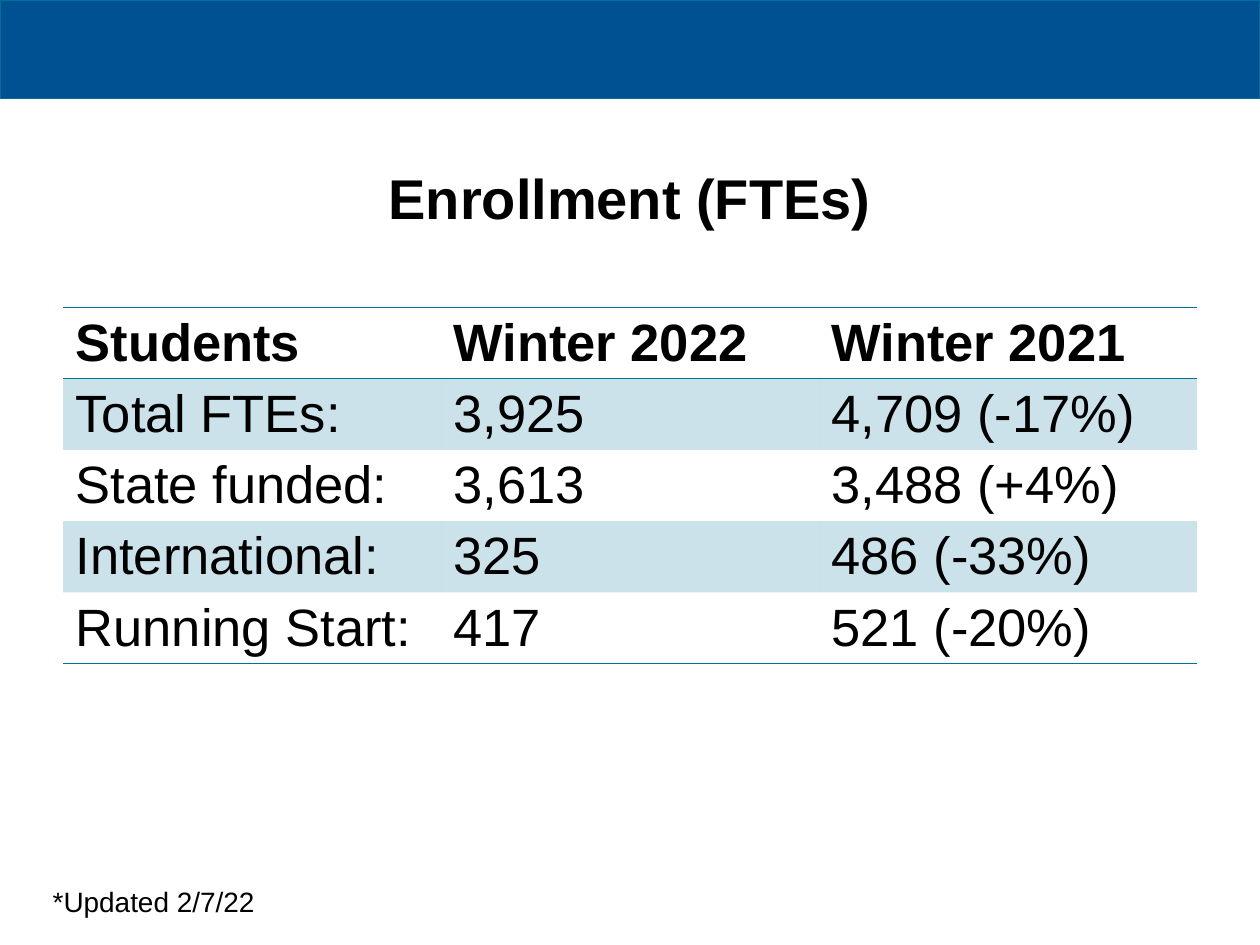
from lxml.etree import SubElement
from pptx import Presentation
from pptx.dml.color import RGBColor
from pptx.enum.shapes import MSO_SHAPE
from pptx.enum.text import MSO_ANCHOR, PP_ALIGN
from pptx.oxml.ns import qn
from pptx.util import Inches, Pt

COLORS = {"banner": "005192", "edge": "006F9B", "rule": "00719F", "text": "000000"}
FONT = "Arial"
ENROLLMENT = [
    ("Students", "Winter 2022", "Winter 2021"),
    ("Total FTEs:", "3,925", "4,709 (-17%)"),
    ("State funded:", "3,613", "3,488 (+4%)"),
    ("International:", "325", "486 (-33%)"),
    ("Running Start:", "417", "521 (-20%)"),
]


def write(frame, text, size, bold=False, align=PP_ALIGN.LEFT):
    """Put one formatted run in the first paragraph of a text frame."""
    para = frame.paragraphs[0]
    para.alignment = align
    span = para.add_run()
    span.text = text
    span.font.name = FONT
    span.font.size = Pt(size)
    span.font.bold = bold
    span.font.color.rgb = RGBColor.from_string(COLORS["text"])


def add_solid_fill(parent, color, alpha=100):
    """Append a solid fill with the given opacity in percent."""
    fill = SubElement(parent, qn("a:solidFill"))
    tone = SubElement(fill, qn("a:srgbClr"), val=color)
    if alpha < 100:
        SubElement(tone, qn("a:alpha"), val=str(alpha * 1000))


def style_cell(cell, ruled_sides, banded):
    """Rule the named sides of a cell and tint it when banded."""
    properties = cell._tc.get_or_add_tcPr()
    for side in "LRTB":
        line = SubElement(properties, qn(f"a:ln{side}"), w=str(Pt(1)))
        if side in ruled_sides:
            add_solid_fill(line, COLORS["rule"])
        else:
            SubElement(line, qn("a:noFill"))
    if banded:
        add_solid_fill(properties, COLORS["rule"], alpha=20)
    else:
        SubElement(properties, qn("a:noFill"))


def add_banner(page, left, top, width, height):
    """Draw the solid band across the top of the page."""
    banner = page.shapes.add_shape(MSO_SHAPE.RECTANGLE, left, top, width, height)
    banner.shadow.inherit = False
    banner.fill.solid()
    banner.fill.fore_color.rgb = RGBColor.from_string(COLORS["banner"])
    banner.line.color.rgb = RGBColor.from_string(COLORS["edge"])
    banner.line.width = Pt(0.75)


def set_title(page, left, top, width, height):
    """Place and fill the title placeholder."""
    title = page.shapes.title
    title.left, title.top, title.width, title.height = left, top, width, height
    title.text_frame.vertical_anchor = MSO_ANCHOR.MIDDLE
    write(title.text_frame, "Enrollment (FTEs)", 32, True, PP_ALIGN.CENTER)


def add_enrollment_table(page, left, top, width, height):
    """Build the enrollment table with ruled header and banded rows."""
    row_count, column_count = len(ENROLLMENT), len(ENROLLMENT[0])
    table = page.shapes.add_table(
        row_count, column_count, left, top, width, height
    ).table
    table.first_row = True
    table.horz_banding = False
    ruled_sides = {0: "TB", 1: "T", row_count - 1: "B"}
    for row, values in enumerate(ENROLLMENT):
        for column, value in enumerate(values):
            cell = table.cell(row, column)
            style_cell(cell, ruled_sides.get(row, ""), row % 2 == 1)
            write(cell.text_frame, value, 30, bold=row == 0)


def add_footnote(page, left, top, width, height):
    """Add the date of the last update."""
    box = page.shapes.add_textbox(left, top, width, height)
    box.text_frame.word_wrap = True
    write(box.text_frame, "*Updated 2/7/22", 16)


def main():
    """Build and save the slide."""
    deck = Presentation()
    deck.slide_width, deck.slide_height = Inches(10), Inches(7.5)
    page = deck.slides.add_slide(deck.slide_layouts[5])
    add_banner(page, 0, 0, deck.slide_width, Inches(0.78))
    set_title(page, Inches(0.5), Inches(0.98), Inches(9), Inches(1.17))
    add_enrollment_table(page, Inches(0.5), Inches(2.44), Inches(9), Inches(2.8))
    add_footnote(page, Inches(0.32), Inches(6.97), Inches(5.34), Inches(0.37))
    deck.save("out.pptx")


if __name__ == "__main__":
    main()
